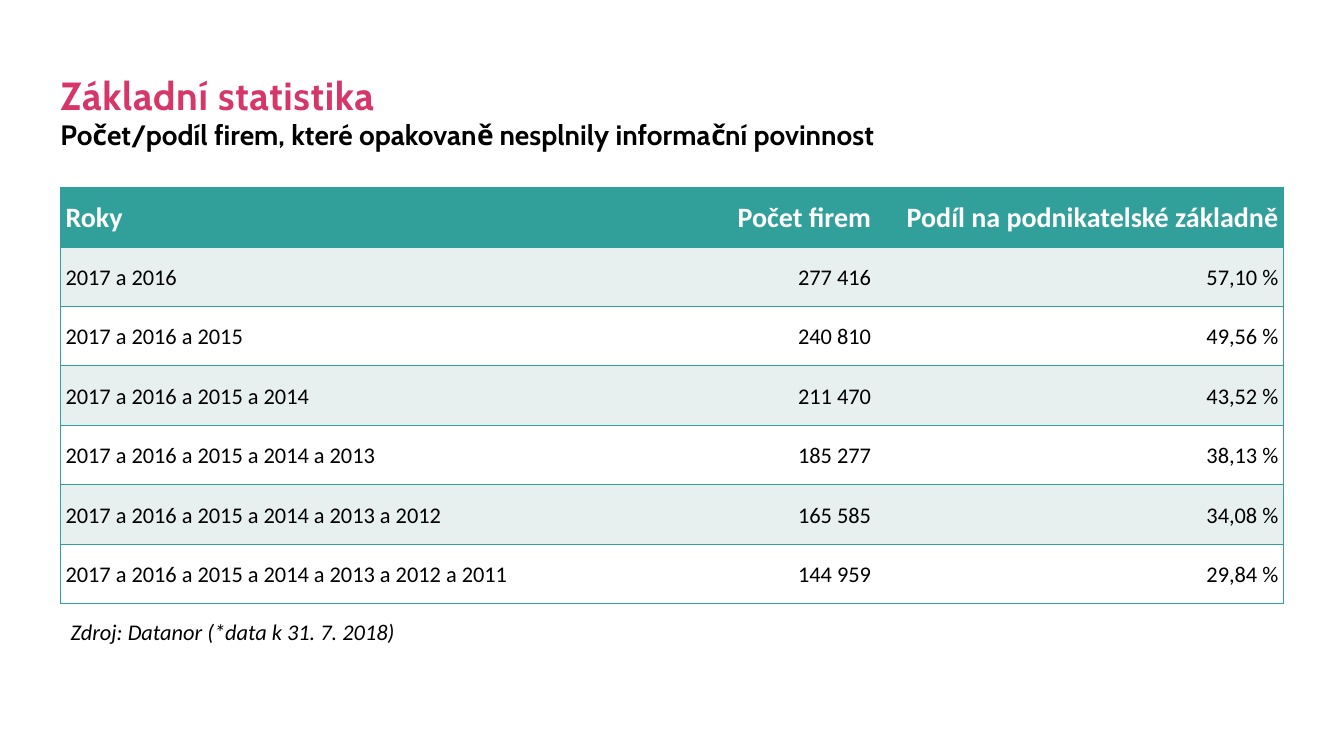
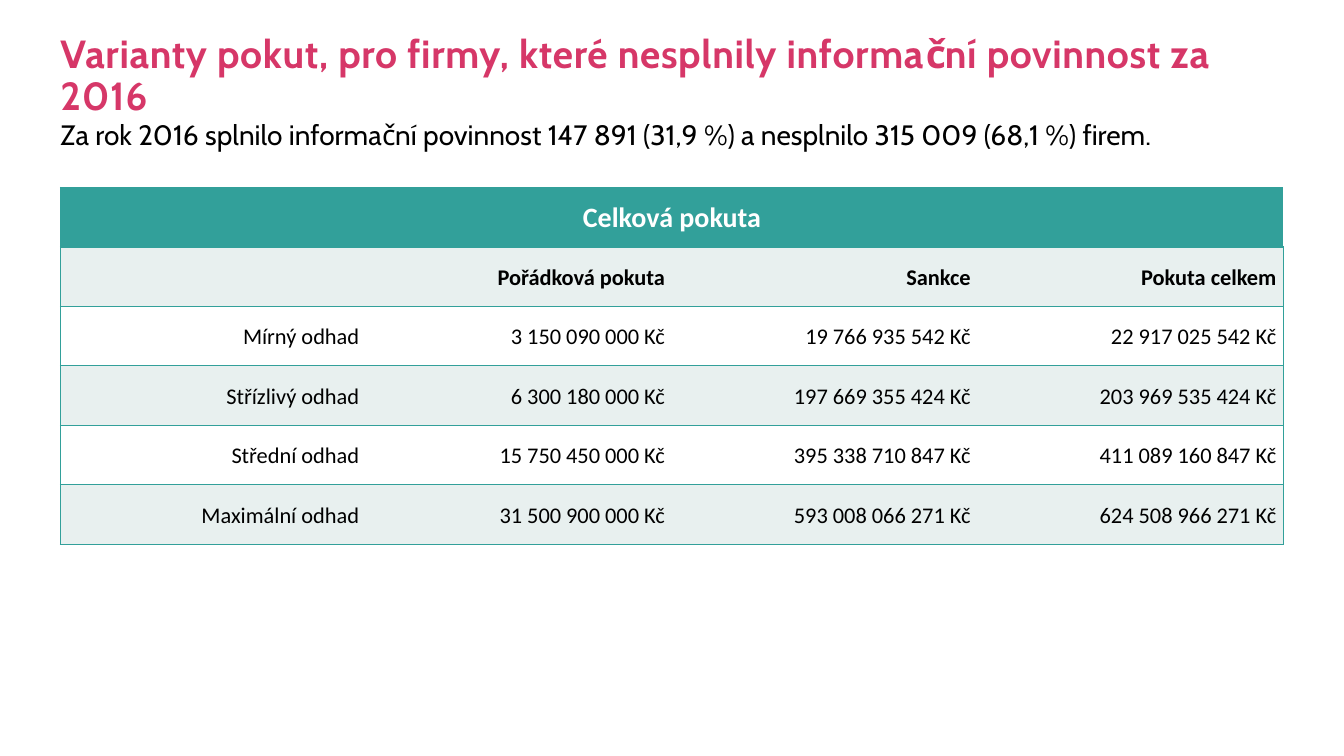
"""Build two slides of statistics on firms that did not publish their accounts."""
from lxml.etree import SubElement
from pptx import Presentation
from pptx.dml.color import RGBColor
from pptx.enum.text import MSO_ANCHOR, PP_ALIGN
from pptx.oxml.ns import qn
from pptx.util import Inches, Pt

PINK = RGBColor(0xD6, 0x37, 0x68)
TEAL = RGBColor(0x32, 0xA0, 0x9A)
PALE = RGBColor(0xE8, 0xF0, 0xEF)
WHITE = RGBColor(0xFF, 0xFF, 0xFF)
BLACK = RGBColor(0, 0, 0)
HEAD, BODY = "Cabin", "Calibri"
LEFT, WIDTH, TOP, ROW = 0.6, 12.13, 1.86, 0.59
PLAIN = "{2D5ABB26-0587-4C30-8999-92F81FD0307C}"
L, C, R = PP_ALIGN.LEFT, PP_ALIGN.CENTER, PP_ALIGN.RIGHT

SLIDES = [
    {
        "title": "Základní statistika",
        "sub": "Počet/podíl firem, které opakovaně nesplnily informační povinnost",
        "strong": True,
        "cols": [5.12, 2.97, 4.04],
        "align": [L, R, R],
        "pad": 0.05,
        "heads": 1,
        "rows": [
            ["Roky", "Počet firem", "Podíl na podnikatelské základně"],
            ["2017 a 2016", "277 416", "57,10 %"],
            ["2017 a 2016 a 2015", "240 810", "49,56 %"],
            ["2017 a 2016 a 2015 a 2014", "211 470", "43,52 %"],
            ["2017 a 2016 a 2015 a 2014 a 2013", "185 277", "38,13 %"],
            ["2017 a 2016 a 2015 a 2014 a 2013 a 2012", "165 585", "34,08 %"],
            ["2017 a 2016 a 2015 a 2014 a 2013 a 2012 a 2011", "144 959", "29,84 %"],
        ],
        "source": "Zdroj: Datanor (*data k 31. 7. 2018)",
    },
    {
        "title": "Varianty pokut, pro firmy, které nesplnily informační povinnost za 2016",
        "sub": "Za rok 2016 splnilo informační povinnost 147 891 (31,9 %) a nesplnilo 315 009 (68,1 %) firem.",
        "strong": False,
        "cols": [WIDTH / 4] * 4,
        "align": [R] * 4,
        "pad": 0.07,
        "heads": 2,
        "rows": [
            ["Celková pokuta"],
            ["", "Pořádková pokuta", "Sankce", "Pokuta celkem"],
            ["Mírný odhad", "3 150 090 000 Kč", "19 766 935 542 Kč", "22 917 025 542 Kč"],
            ["Střízlivý odhad", "6 300 180 000 Kč", "197 669 355 424 Kč", "203 969 535 424 Kč"],
            ["Střední odhad", "15 750 450 000 Kč", "395 338 710 847 Kč", "411 089 160 847 Kč"],
            ["Maximální odhad", "31 500 900 000 Kč", "593 008 066 271 Kč", "624 508 966 271 Kč"],
        ],
        "source": "",
    },
]


def style(frame, text, face, size, color, bold=False, space=0.9, align=L):
    frame.text = text
    para = frame.paragraphs[0]
    para.alignment, para.line_spacing = align, space
    for run in para.runs:
        font = run.font
        font.name, font.size, font.bold = face, Pt(size), bold
        font.color.rgb = color
    return para


def add_text(slide, top, high, inset, anchor, *look):
    box = slide.shapes.add_textbox(Inches(LEFT), Inches(top), Inches(WIDTH), Inches(high))
    frame = box.text_frame
    frame.word_wrap = True
    frame.vertical_anchor = anchor
    frame.margin_left = frame.margin_right = frame.margin_bottom = 0
    frame.margin_top = Inches(inset)
    return style(frame, *look)


def add_heads(slide, data):
    para = add_text(slide, 0.76, 0.42, 0, MSO_ANCHOR.BOTTOM,
                    data["title"], HEAD, 28, PINK, True)
    para.runs[0].font._element.set("spc", "50")
    add_text(slide, 1.18, 0.31, 0.02, MSO_ANCHOR.TOP,
             data["sub"], HEAD, 20, BLACK, data["strong"])


def edge(cell, sides):
    props = cell._tc.get_or_add_tcPr()
    for side in sides:
        line = SubElement(props, qn(f"a:ln{side}"), w=str(Pt(1)))
        fill = SubElement(line, qn("a:solidFill"))
        SubElement(fill, qn("a:srgbClr"), val=str(TEAL))


def set_cell(cell, pad, sides, fill, *look):
    cell.margin_left = cell.margin_right = Inches(pad)
    cell.margin_top = cell.margin_bottom = 0
    cell.vertical_anchor = MSO_ANCHOR.MIDDLE
    edge(cell, sides)
    if fill is None:
        cell.fill.background()
    else:
        cell.fill.solid()
        cell.fill.fore_color.rgb = fill
    return style(cell.text_frame, *look)


def add_grid(slide, data):
    rows, cols, note = data["rows"], data["cols"], data["source"]
    count, last = len(rows) + bool(note), len(cols) - 1
    frame = slide.shapes.add_table(count, len(cols), Inches(LEFT), Inches(TOP),
                                   Inches(WIDTH), Inches(ROW * count))
    grid = frame.table
    grid.first_row = grid.horz_banding = False
    grid._tbl.tblPr.find(qn("a:tableStyleId")).text = PLAIN
    for col, wide in zip(grid.columns, cols):
        col.width = Inches(wide)
    for row in grid.rows:
        row.height = Inches(ROW)
    for i, row in enumerate(rows):
        whole = len(row) == 1
        fill = TEAL if i == 0 else PALE if i % 2 else WHITE
        size, color = (20, WHITE) if i == 0 else (16, BLACK)
        for j in range(len(cols)):
            text = row[j] if j < len(row) else ""
            sides = "L" * (j == 0) + "R" * (j == last) + "TB"
            set_cell(grid.cell(i, j), data["pad"], sides, fill, text, BODY, size,
                     color, i < data["heads"], 1.07, C if whole else data["align"][j])
        if whole:
            grid.cell(i, 0).merge(grid.cell(i, last))
    if note:
        for j in range(len(cols)):
            para = set_cell(grid.cell(count - 1, j), 0.1, "T", None,
                            "" if j else note, BODY, 16, BLACK, False, 1.0)
            for run in para.runs:
                run.font.italic = True


def main():
    deck = Presentation()
    deck.slide_width, deck.slide_height = Inches(13.33), Inches(7.5)
    for data in SLIDES:
        slide = deck.slides.add_slide(deck.slide_layouts[6])
        add_heads(slide, data)
        add_grid(slide, data)
    deck.save("out.pptx")


if __name__ == "__main__":
    main()
